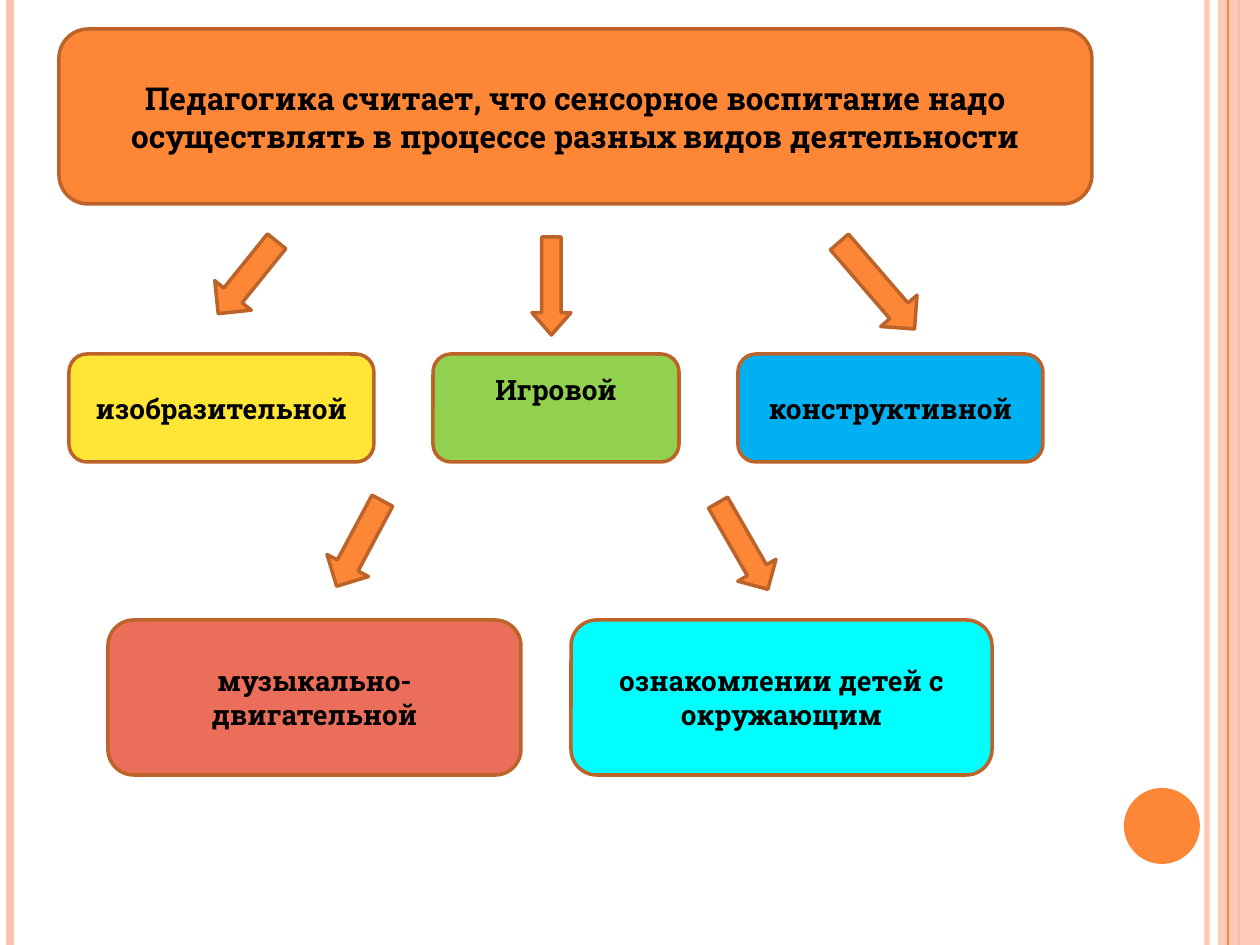
"""Build a slide on the kinds of activity used in sensory education."""
from dataclasses import dataclass

from lxml import etree
from pptx import Presentation
from pptx.dml.color import RGBColor
from pptx.enum.shapes import MSO_CONNECTOR, MSO_SHAPE
from pptx.enum.text import MSO_ANCHOR, PP_ALIGN
from pptx.oxml.ns import qn
from pptx.util import Emu, Pt

STRAIGHT = MSO_CONNECTOR.STRAIGHT
ROUNDED = MSO_SHAPE.ROUNDED_RECTANGLE
RECTANGLE = MSO_SHAPE.RECTANGLE
OVAL = MSO_SHAPE.OVAL
DOWN_ARROW = MSO_SHAPE.DOWN_ARROW
MIDDLE = MSO_ANCHOR.MIDDLE
CENTER = PP_ALIGN.CENTER

PIXELS_PER_INCH = 126
SLIDE_WIDTH, SLIDE_HEIGHT = 1260, 945
OUTLINE_POINTS = 2
COLORS = {
    "orange": "FE8637",
    "brown": "BC6329",
    "peach": "FEC3AE",
    "yellow": "FFE636",
    "green": "92D050",
    "blue": "00B0F0",
    "coral": "EB6E5A",
    "cyan": "00FFFF",
    "black": "000000",
}
ACTIVITY_TOP, ACTIVITY_HEIGHT = 354, 108
LOWER_TOP, LOWER_HEIGHT = 620, 155


@dataclass
class Box:
    text: str
    left: int
    top: int
    width: int
    height: int
    color: str
    size: int = 16
    bottom_inset: int = 6


@dataclass
class Arrow:
    left: int
    top: int
    width: int
    height: int
    rotation: float = 0
    head: float = 0.5


@dataclass
class Stripe:
    x: int
    color: str
    points: float
    opacity: int = 100


BOXES = [
    Box("Педагогика считает, что сенсорное воспитание надо осуществлять "
        "в процессе разных видов деятельности", 59, 29, 1033, 175, "orange", 18),
    Box("изобразительной", 69, ACTIVITY_TOP, 305, ACTIVITY_HEIGHT, "yellow"),
    Box("Игровой", 433, ACTIVITY_TOP, 246, ACTIVITY_HEIGHT, "green", bottom_inset=43),
    Box("конструктивной", 738, ACTIVITY_TOP, 305, ACTIVITY_HEIGHT, "blue"),
    Box("музыкально-двигательной", 108, LOWER_TOP, 413, LOWER_HEIGHT, "coral"),
    Box("ознакомлении детей с окружающим", 571, LOWER_TOP, 421, LOWER_HEIGHT, "cyan"),
]
ARROWS = [
    Arrow(224, 231, 47, 93, 38.9),
    Arrow(532, 237, 39, 98, head=0.57),
    Arrow(853, 228, 48, 115, 319.2),
    Arrow(336, 495, 47, 97, 28.1),
    Arrow(721, 496, 44, 100, 330.1),
]
BACK_STRIPES = [
    Stripe(1207, "peach", 3, 93),
    Stripe(10, "peach", 4.5),
    Stripe(1239, "orange", 1.5),
]
FRONT_STRIPE = Stripe(1228, "orange", 0.75)


def px(length: int) -> Emu:
    """Convert pixels to EMU."""
    return Emu(round(length * 914400 / PIXELS_PER_INCH))


def rgb(name: str) -> RGBColor:
    """Look up a named colour."""
    return RGBColor.from_string(COLORS[name])


def set_opacity(element, percent: int) -> None:
    """Make the first colour inside an element translucent."""
    color = next(element.iter(qn("a:srgbClr")))
    etree.SubElement(color, qn("a:alpha"), val=str(percent * 1000))


def add_filled(slide, kind, left: int, top: int, width: int, height: int,
               color: str, outlined: bool = True):
    """Add a flat preset shape, with or without the brown outline."""
    shape = slide.shapes.add_shape(kind, px(left), px(top), px(width), px(height))
    shape.shadow.inherit = False
    shape.fill.solid()
    shape.fill.fore_color.rgb = rgb(color)
    if outlined:
        shape.line.color.rgb = rgb("brown")
        shape.line.width = Pt(OUTLINE_POINTS)
    else:
        shape.line.fill.background()
    return shape


def add_box(slide, box: Box) -> None:
    """Add a rounded box with centred bold text."""
    shape = add_filled(slide, ROUNDED, box.left, box.top, box.width, box.height, box.color)
    frame = shape.text_frame
    frame_format = {"word_wrap": True, "vertical_anchor": MIDDLE,
                    "margin_bottom": px(box.bottom_inset)}
    for name, value in frame_format.items():
        setattr(frame, name, value)
    paragraph = frame.paragraphs[0]
    paragraph.alignment = CENTER
    run = paragraph.add_run()
    run.text = box.text
    font_format = {"name": "Roboto Slab", "size": Pt(box.size), "bold": True}
    for name, value in font_format.items():
        setattr(run.font, name, value)
    run.font.color.rgb = rgb("black")


def add_arrow(slide, arrow: Arrow) -> None:
    """Add a turned block arrow."""
    shape = add_filled(slide, DOWN_ARROW, arrow.left, arrow.top,
                       arrow.width, arrow.height, "orange")
    shape.adjustments[1] = arrow.head
    shape.rotation = arrow.rotation


def add_stripe(slide, stripe: Stripe) -> None:
    """Add a vertical line over the full slide height."""
    connector = slide.shapes.add_connector(
        STRAIGHT, px(stripe.x), px(0), px(stripe.x), px(SLIDE_HEIGHT))
    connector.line.color.rgb = rgb(stripe.color)
    connector.line.width = Pt(stripe.points)
    properties = connector._element.spPr
    if stripe.opacity < 100:
        set_opacity(properties, stripe.opacity)
    etree.SubElement(properties, qn("a:effectLst"))


def add_decoration(slide) -> None:
    """Add the edge stripes, the side band and the corner circle."""
    for stripe in BACK_STRIPES:
        add_stripe(slide, stripe)
    band = add_filled(slide, RECTANGLE, 1218, 0, 42, SLIDE_HEIGHT, "peach", outlined=False)
    set_opacity(band._element.spPr, 87)
    add_stripe(slide, FRONT_STRIPE)
    add_filled(slide, OVAL, 1124, 788, 76, 76, "orange", outlined=False)


def main() -> None:
    """Build and save the presentation."""
    presentation = Presentation()
    presentation.slide_width = px(SLIDE_WIDTH)
    presentation.slide_height = px(SLIDE_HEIGHT)
    slide = presentation.slides.add_slide(presentation.slide_layouts[6])
    add_decoration(slide)
    for box in BOXES:
        add_box(slide, box)
    for arrow in ARROWS:
        add_arrow(slide, arrow)
    presentation.save("out.pptx")


if __name__ == "__main__":
    main()
